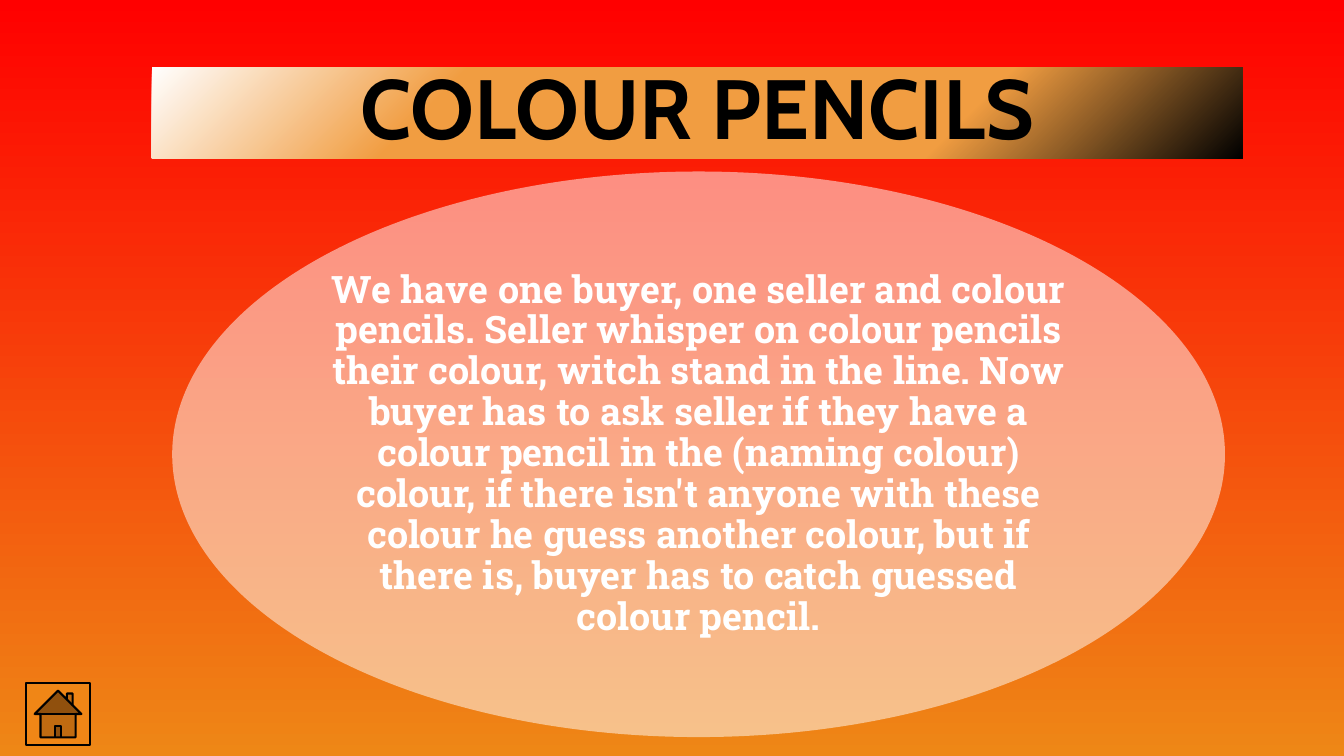
from lxml import etree
from pptx import Presentation
from pptx.dml.color import RGBColor
from pptx.enum.shapes import MSO_SHAPE
from pptx.enum.text import MSO_ANCHOR, MSO_AUTO_SIZE, PP_ALIGN
from pptx.oxml import parse_xml
from pptx.oxml.ns import qn
from pptx.util import Pt

COLOURS = {
    "red": "FF0000",
    "amber": "EE8716",
    "button": "F08616",
    "banner": "F19D41",
    "black": "000000",
    "white": "FFFFFF",
}
DRAWING = "http://schemas.openxmlformats.org/drawingml/2006/main"
RULES = (
    "We have one buyer, one seller and colour pencils. Seller whisper on colour "
    "pencils their colour, witch stand in the line. Now buyer has to ask seller if "
    "they have a colour pencil in the (naming colour) colour, if there isn't anyone "
    "with these colour he guess another colour, but if there is, buyer has to catch "
    "guessed colour pencil."
)


def rgb(name):
    return RGBColor.from_string(COLOURS[name])


def write_text(frame, text, *, font, size, colour):
    """Fill the frame with one bold, centred paragraph."""
    frame.word_wrap = True
    frame.auto_size = MSO_AUTO_SIZE.NONE
    frame.vertical_anchor = MSO_ANCHOR.MIDDLE
    para = frame.paragraphs[0]
    para.alignment = PP_ALIGN.CENTER
    para.line_spacing = 0.9
    span = para.add_run()
    span.text = text
    span.font.name = font
    span.font.size = Pt(size)
    span.font.bold = True
    span.font.color.rgb = rgb(colour)


def paint_background(page):
    fill = page.background.fill
    fill.gradient()
    fill.gradient_angle = 270
    for stop, name in zip(fill.gradient_stops, ("red", "amber")):
        stop.color.rgb = rgb(name)


def radial_fill(stops):
    """Return a circular gradient that spreads from the bottom right corner."""
    marks = "".join(
        f'<a:gs pos="{percent * 1000}"><a:srgbClr val="{COLOURS[name]}"/></a:gs>'
        for percent, name in stops
    )
    return parse_xml(
        f'<a:gradFill xmlns:a="{DRAWING}" rotWithShape="1"><a:gsLst>{marks}</a:gsLst>'
        '<a:path path="circle"><a:fillToRect l="100000" t="100000"/></a:path>'
        "</a:gradFill>"
    )


def add_banner(page, left, top, width, height):
    title = page.shapes.title
    title.left, title.top = Pt(left), Pt(top)
    title.width, title.height = Pt(width), Pt(height)
    stops = [(0, "black"), (27, "banner"), (73, "banner"), (100, "white")]
    title._element.spPr.append(radial_fill(stops))
    write_text(title.text_frame, "COLOUR PENCILS",
               font="Cabin", size=60, colour="black")


def add_rules(page, left, top, width, height):
    """Group a translucent ellipse with the rules of the game inside it."""
    group = page.shapes.add_group_shape()
    ellipse = group.shapes.add_shape(
        MSO_SHAPE.OVAL, Pt(left), Pt(top), Pt(width), Pt(height))
    ellipse.shadow.inherit = False
    ellipse.fill.solid()
    ellipse.fill.fore_color.rgb = rgb("white")
    ellipse.line.fill.background()
    tint = ellipse._element.spPr.find(qn("a:solidFill"))[0]
    etree.SubElement(tint, qn("a:alpha"), val="50000")

    inset_x, inset_y = width * 0.1465, height * 0.146
    box = group.shapes.add_textbox(
        Pt(left + inset_x), Pt(top + inset_y),
        Pt(width - 2 * inset_x), Pt(height - 2 * inset_y))
    frame = box.text_frame
    frame.margin_left = frame.margin_right = 0
    frame.margin_top = frame.margin_bottom = 0
    write_text(frame, RULES, font="Roboto Slab", size=27, colour="white")


def add_home_button(page, left, top, width, height):
    button = page.shapes.add_shape(
        MSO_SHAPE.ACTION_BUTTON_HOME, Pt(left), Pt(top), Pt(width), Pt(height))
    button.shadow.inherit = False
    button.fill.solid()
    button.fill.fore_color.rgb = rgb("button")
    button.line.color.rgb = rgb("black")
    button.line.width = Pt(1.5)


def main():
    deck = Presentation()
    deck.slide_width, deck.slide_height = Pt(960), Pt(540)
    page = deck.slides.add_slide(deck.slide_layouts[5])
    paint_background(page)
    add_banner(page, 108.5, 48, 779, 65)
    add_rules(page, 123, 122.5, 752, 404)
    add_home_button(page, 18.75, 487.75, 45.5, 44.5)
    deck.save("out.pptx")


if __name__ == "__main__":
    main()
